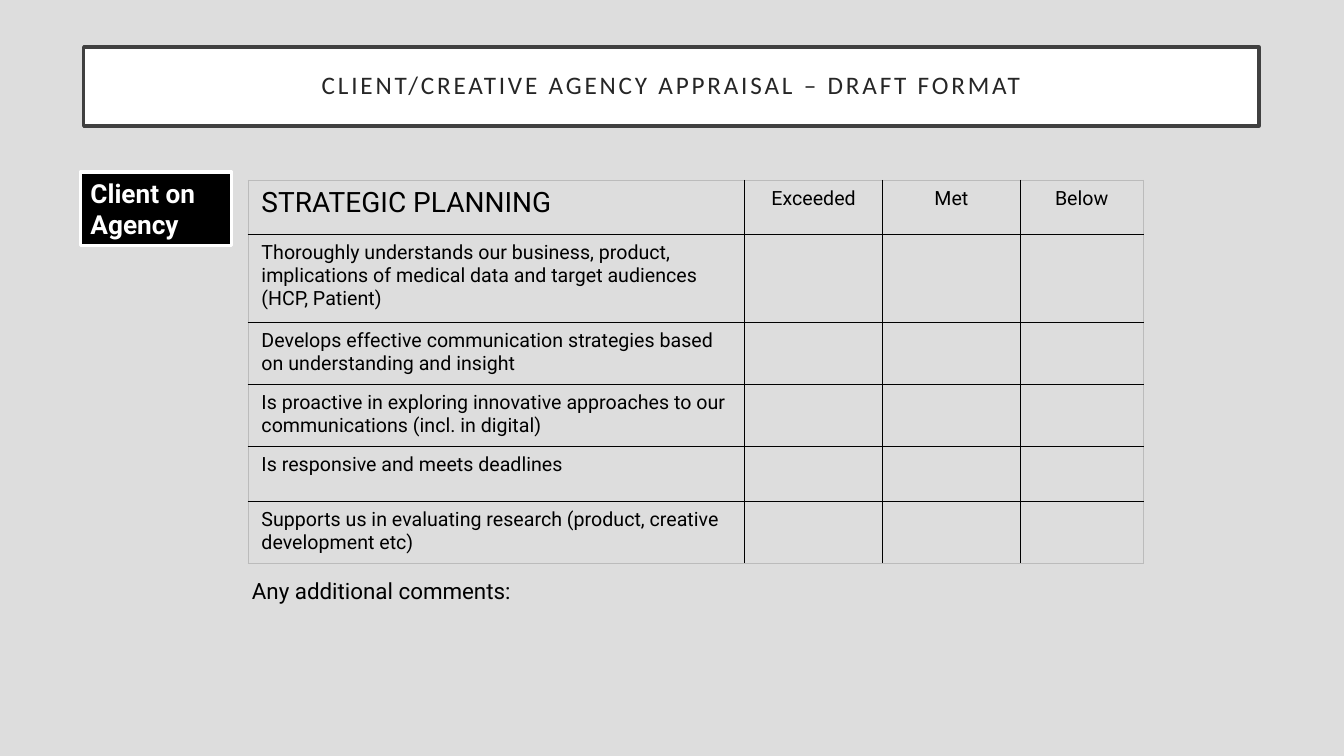
from dataclasses import dataclass

from lxml import etree
from pptx import Presentation
from pptx.dml.color import RGBColor
from pptx.enum.shapes import MSO_SHAPE
from pptx.enum.text import MSO_ANCHOR, MSO_AUTO_SIZE, PP_ALIGN
from pptx.oxml.ns import qn
from pptx.util import Cm, Pt

LEFT, CENTER = PP_ALIGN.LEFT, PP_ALIGN.CENTER
TOP, MIDDLE = MSO_ANCHOR.TOP, MSO_ANCHOR.MIDDLE
FIXED = MSO_AUTO_SIZE.NONE
RECT = MSO_SHAPE.RECTANGLE


@dataclass(frozen=True)
class Theme:
    back: str = "DDDDDD"
    white: str = "FFFFFF"
    black: str = "000000"
    frame: str = "404040"
    ink: str = "262626"
    edge: str = "BBBBBB"
    head: str = "Calibri"
    body: str = "Roboto"
    title: float = 18
    topic: float = 20
    label: float = 14
    note: float = 16
    tag: float = 18.7


THEME = Theme()
GRADES = ["Exceeded", "Met", "Below"]
POINTS = [
    "Thoroughly understands our business, product, implications of medical data "
    "and target audiences (HCP, Patient)",
    "Develops effective communication strategies based on understanding and insight",
    "Is proactive in exploring innovative approaches to our communications "
    "(incl. in digital)",
    "Is responsive and meets deadlines",
    "Supports us in evaluating research (product, creative development etc)",
]
WIDTHS = [12.52, 3.47, 3.47, 3.1]
HEIGHTS = [1.37, 2.21, 1.57, 1.57, 1.37, 1.57]


def apply(item, values):
    for name, value in values.items():
        setattr(item, name, value)


def place(shape, box):
    names = ("left", "top", "width", "height")
    apply(shape, dict(zip(names, map(Cm, box))))


def inset(item, side, edge):
    apply(item, {"margin_left": Cm(side), "margin_right": Cm(side),
                 "margin_top": Cm(edge), "margin_bottom": Cm(edge)})


def write(frame, text, size, color=THEME.black, font=THEME.body,
          bold=False, align=LEFT):
    para = frame.paragraphs[0]
    para.alignment = align
    run = para.add_run()
    run.text = text
    apply(run.font, {"name": font, "size": Pt(size), "bold": bold})
    run.font.color.rgb = RGBColor.from_string(color)
    return run


def paint(shape, fill, line):
    shape.fill.solid()
    shape.fill.fore_color.rgb = RGBColor.from_string(fill)
    shape.line.color.rgb = RGBColor.from_string(line)
    shape.line.width = Pt(2.5)
    shape.shadow.inherit = False


def add_title(slide, text, box):
    title = slide.shapes.title
    place(title, box)
    paint(title, THEME.white, THEME.frame)
    frame = title.text_frame
    apply(frame, {"auto_size": FIXED, "word_wrap": True,
                  "vertical_anchor": MIDDLE})
    inset(frame, 0.51, 0.51)
    run = write(frame, text, THEME.title, THEME.ink, THEME.head, align=CENTER)
    run.font._element.set("spc", "200")
    frame.paragraphs[0].line_spacing = 0.9


def add_tag(slide, text, box):
    tag = slide.shapes.add_shape(RECT, *map(Cm, box))
    paint(tag, THEME.black, THEME.white)
    apply(tag.text_frame, {"word_wrap": True, "vertical_anchor": TOP})
    write(tag.text_frame, text, THEME.tag, THEME.white, bold=True)


def add_note(slide, text, box):
    frame = slide.shapes.add_textbox(*map(Cm, box)).text_frame
    frame.word_wrap = True
    write(frame, text, THEME.note)


def rule(cell, outer):
    props = cell._tc.get_or_add_tcPr()
    for spot, side in enumerate("LRTB"):
        color, width = (THEME.edge, 0.5) if side in outer else (THEME.black, 1)
        line = etree.Element(qn(f"a:ln{side}"), w=str(Pt(width)))
        fill = etree.SubElement(line, qn("a:solidFill"))
        etree.SubElement(fill, qn("a:srgbClr"), val=color)
        props.insert(spot, line)


def add_grid(slide, rows, left, top):
    table = slide.shapes.add_table(
        len(rows), len(WIDTHS), Cm(left), Cm(top),
        Cm(sum(WIDTHS)), Cm(sum(HEIGHTS))).table
    apply(table, {"first_row": False, "horz_banding": False})
    for col, width in zip(table.columns, WIDTHS):
        col.width = Cm(width)
    for row, height in zip(table.rows, HEIGHTS):
        row.height = Cm(height)
    for r, texts in enumerate(rows):
        for c, text in enumerate(texts):
            cell = table.cell(r, c)
            inset(cell, 0.34, 0.17)
            cell.fill.background()
            ends = {"L": c == 0, "R": c == len(texts) - 1,
                    "T": r == 0, "B": r == len(rows) - 1}
            rule(cell, [side for side, end in ends.items() if end])
            if text:
                size = THEME.topic if r == c == 0 else THEME.label
                write(cell.text_frame, text, size, align=CENTER if c else LEFT)


def main():
    deck = Presentation()
    apply(deck, {"slide_width": Cm(33.87), "slide_height": Cm(19.05)})
    slide = deck.slides.add_slide(deck.slide_layouts[5])
    slide.background.fill.solid()
    slide.background.fill.fore_color.rgb = RGBColor.from_string(THEME.back)
    add_title(slide, "CLIENT/CREATIVE AGENCY APPRAISAL – DRAFT FORMAT",
              (2.11, 1.19, 29.62, 1.98))
    rows = [["STRATEGIC PLANNING", *GRADES]]
    rows += [[point] + [""] * len(GRADES) for point in POINTS]
    add_grid(slide, rows, 6.25, 4.54)
    add_note(slide, "Any additional comments:", (6.1, 14.43, 9.32, 0.94))
    add_tag(slide, "Client on Agency", (2.03, 4.34, 3.81, 1.85))
    deck.save("out.pptx")


if __name__ == "__main__":
    main()
